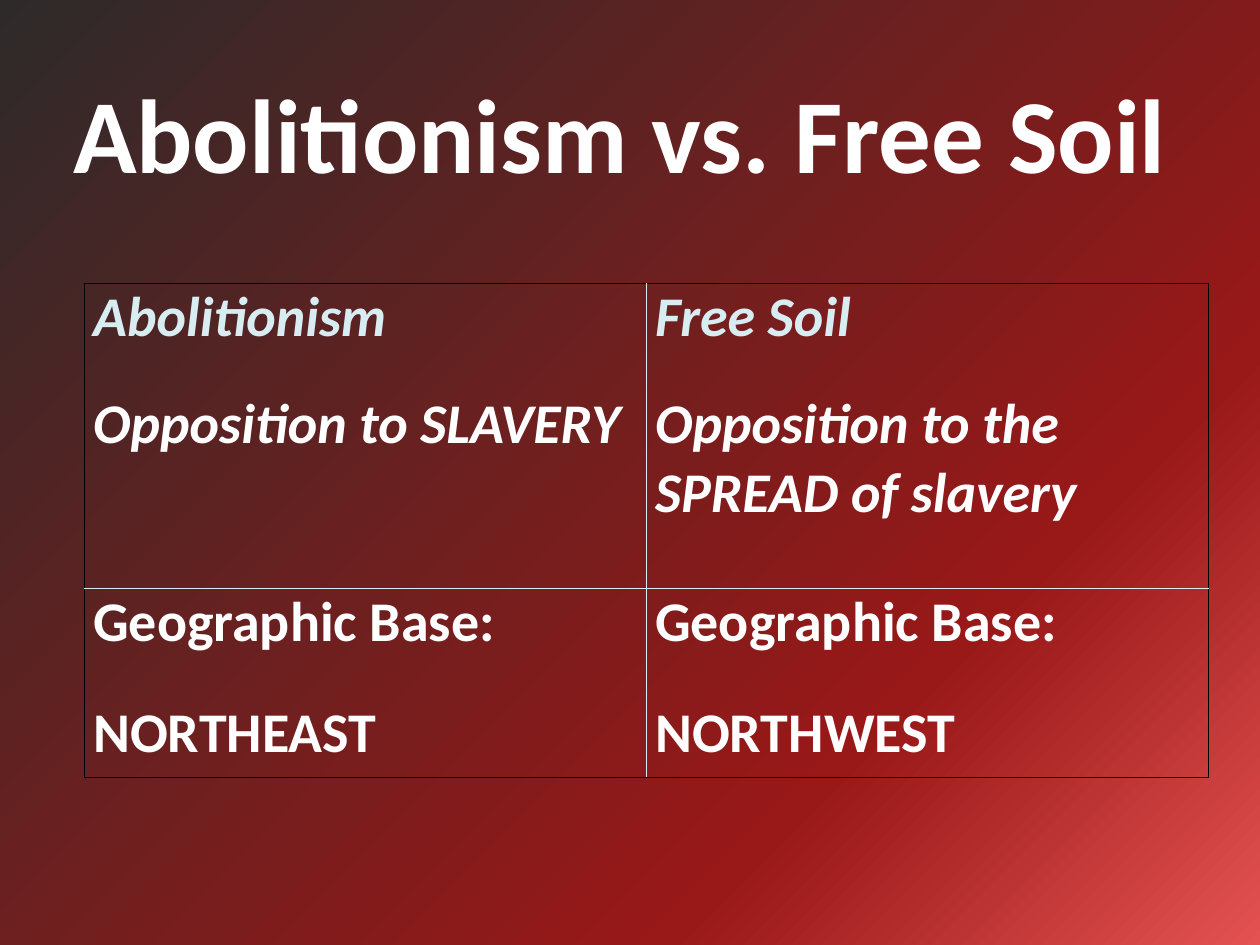
from lxml.etree import SubElement
from pptx import Presentation
from pptx.dml.color import RGBColor
from pptx.enum.text import MSO_ANCHOR, PP_ALIGN
from pptx.oxml import parse_xml
from pptx.oxml.ns import nsdecls, qn
from pptx.util import Inches, Pt

WHITE = RGBColor(0xFF, 0xFF, 0xFF)
BLACK = RGBColor(0x00, 0x00, 0x00)
PALE = RGBColor(0xD8, 0xED, 0xF2)
CORAL = RGBColor(0xE4, 0x52, 0x52)
RED = RGBColor(0x99, 0x18, 0x18)
CHARCOAL = RGBColor(0x2E, 0x2A, 0x2A)

# Each cell holds (text, colour) paragraphs
ROWS = [
    dict(height=2.42, gap=22, italic=True, cells=[
        [("Abolitionism", PALE), ("Opposition to SLAVERY", WHITE)],
        [("Free Soil", PALE), ("Opposition to the SPREAD of slavery", WHITE)],
    ]),
    dict(height=1.5, gap=24.4, italic=False, cells=[
        [("Geographic Base:", WHITE), ("NORTHEAST", WHITE)],
        [("Geographic Base:", WHITE), ("NORTHWEST", WHITE)],
    ]),
]


def write(p, text, size=32, color=WHITE, italic=False, align=None, before=0):
    p.alignment = align
    p.space_before = Pt(before)
    r = p.add_run()
    r.text = text
    font = r.font
    font.name, font.size, font.bold, font.italic = "Calibri", Pt(size), True, italic
    font.color.rgb = color


def add_background(s):
    """Gradient spreading from the bottom right corner."""
    stops = "".join(
        f'<a:gs pos="{pos * 1000}"><a:srgbClr val="{color}"/></a:gs>'
        for pos, color in [(0, CORAL), (27, RED), (100, CHARCOAL)])
    bg = parse_xml(
        f'<p:bg {nsdecls("p", "a")}><p:bgPr><a:gradFill rotWithShape="1">'
        f'<a:gsLst>{stops}</a:gsLst><a:path path="circle">'
        '<a:fillToRect l="100000" t="100000"/></a:path>'
        '<a:tileRect r="-100000" b="-100000"/></a:gradFill>'
        '<a:effectLst/></p:bgPr></p:bg>')
    s.element.find(qn("p:cSld")).insert(0, bg)


def add_title(s, left, top, width, height):
    tf = s.shapes.add_textbox(left, top, width, height).text_frame
    tf.word_wrap = True
    tf.vertical_anchor = MSO_ANCHOR.MIDDLE
    write(tf.paragraphs[0], "Abolitionism vs. Free Soil", size=60,
          align=PP_ALIGN.CENTER)


def set_borders(cell, **colors):
    tc_pr = cell._tc.get_or_add_tcPr()
    for i, (side, color) in enumerate(colors.items()):
        ln = parse_xml(f'<a:ln{side} {nsdecls("a")} w="12700"/>')
        fill = SubElement(ln, qn("a:solidFill"))
        SubElement(fill, qn("a:srgbClr"), val=str(color))
        tc_pr.insert(i, ln)


def add_comparison(s, left, top, width, height):
    table = s.shapes.add_table(len(ROWS), 2, left, top, width, height).table
    table.first_row = table.horz_banding = False
    for i, row in enumerate(ROWS):
        table.rows[i].height = Inches(row["height"])
        for j, paragraphs in enumerate(row["cells"]):
            cell = table.cell(i, j)
            cell.fill.background()
            cell.margin_left = cell.margin_right = Inches(0.07)
            cell.margin_top = cell.margin_bottom = 0
            # Black outline, pale inner rules
            set_borders(cell, L=PALE if j else BLACK, R=BLACK if j else PALE,
                        T=PALE if i else BLACK, B=BLACK if i else PALE)
            tf = cell.text_frame
            for k, (text, color) in enumerate(paragraphs):
                p = tf.add_paragraph() if k else tf.paragraphs[0]
                write(p, text, color=color, italic=row["italic"],
                      before=row["gap"] if k else 0)


def main():
    prs = Presentation()
    prs.slide_width, prs.slide_height = Inches(10), Inches(7.5)
    s = prs.slides.add_slide(prs.slide_layouts[6])
    add_background(s)
    add_comparison(s, Inches(0.67), Inches(2.25), Inches(8.92), Inches(3.92))
    add_title(s, Inches(0.42), Inches(0.42), Inches(9), Inches(1.25))
    prs.save("out.pptx")


if __name__ == "__main__":
    main()
